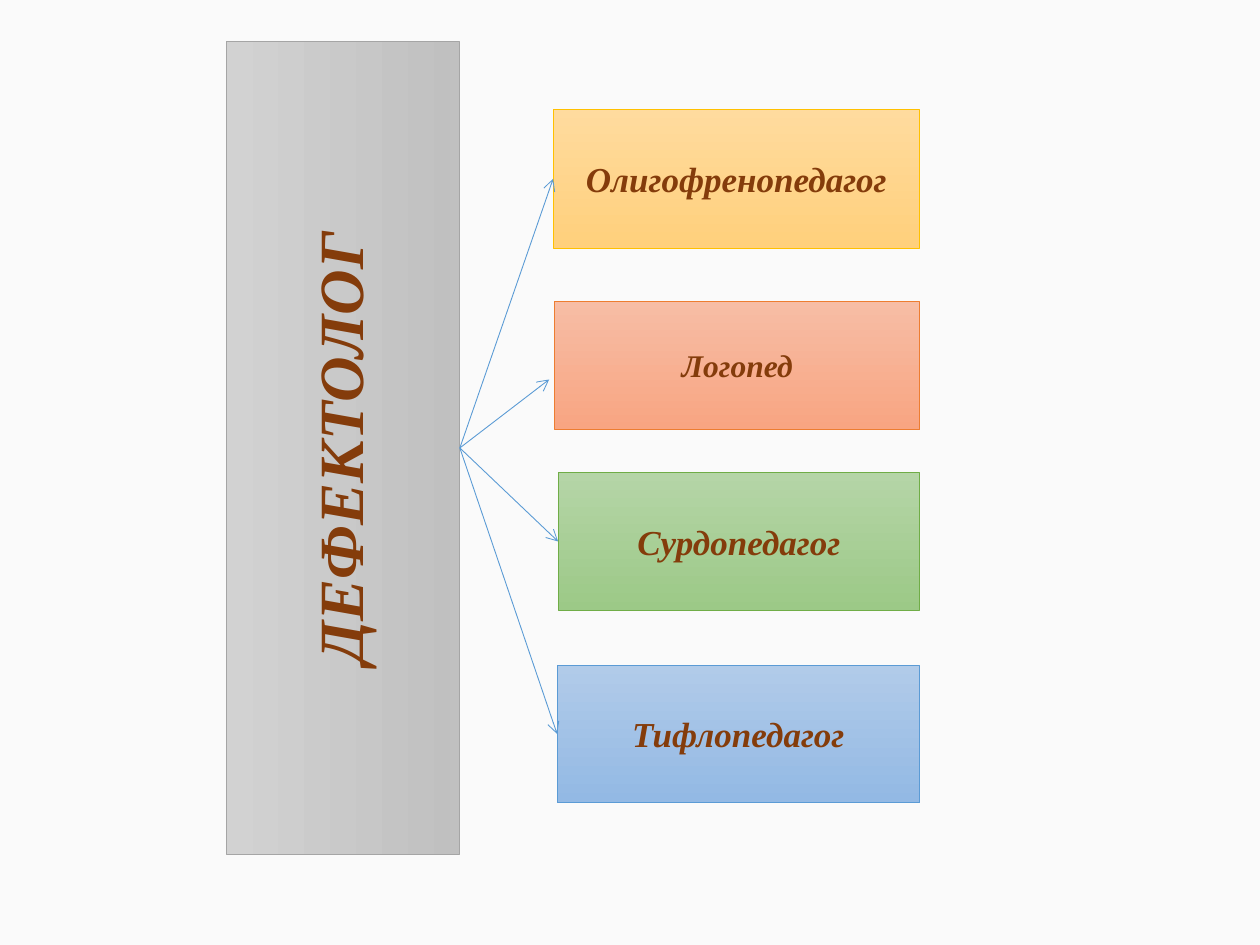
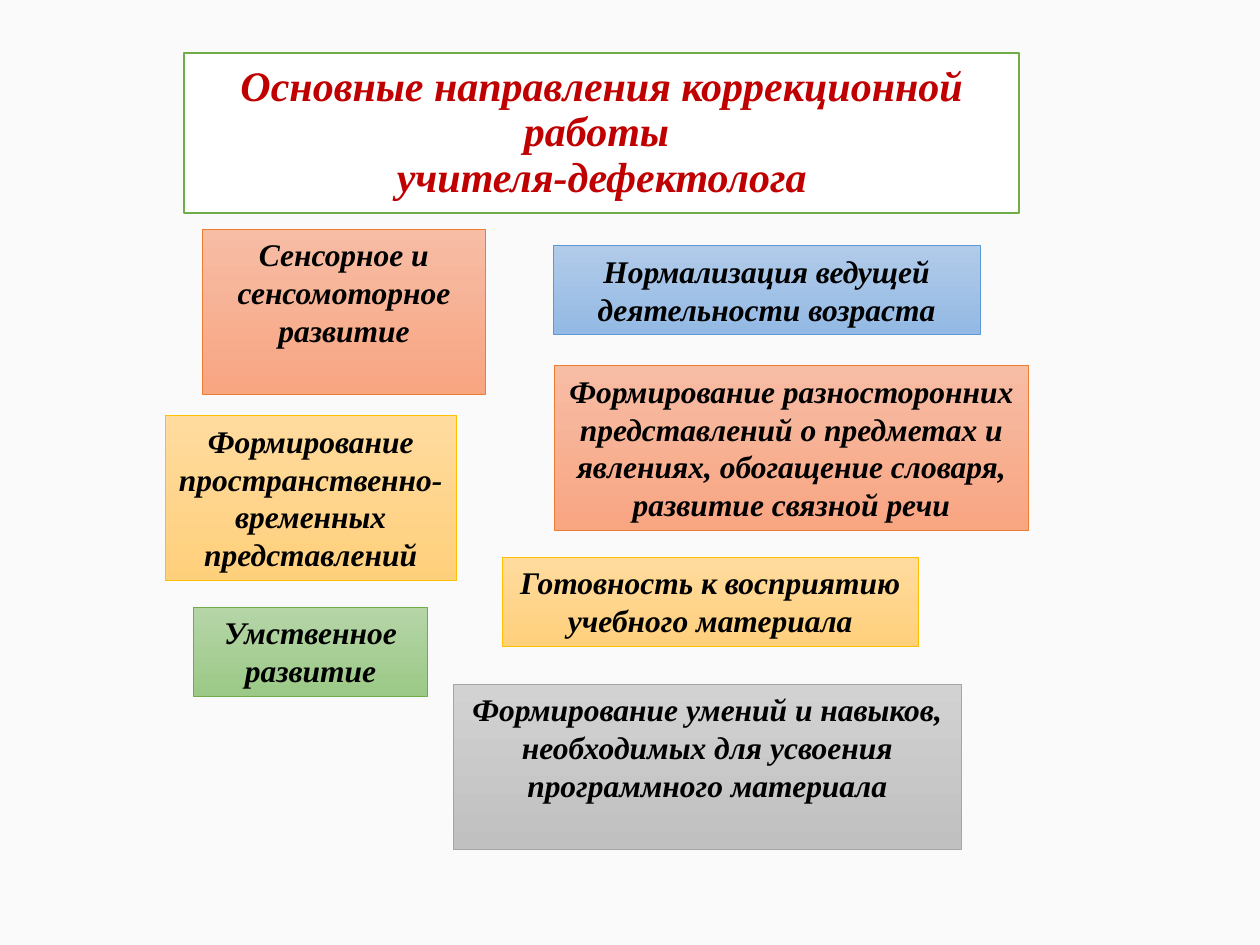
import pptx
import pptx.util
import pptx.dml.color
import pptx.enum.shapes
import pptx.enum.text
import pptx.oxml
import pptx.oxml.ns

Cm = pptx.util.Cm
Pt = pptx.util.Pt
RGBColor = pptx.dml.color.RGBColor
Kind = pptx.enum.shapes.MSO_SHAPE
Anchor = pptx.enum.text.MSO_ANCHOR

FONT = "Times New Roman"
PAPER = RGBColor(0xFA, 0xFA, 0xFA)
WHITE = RGBColor(0xFF, 0xFF, 0xFF)
BLACK = RGBColor(0x00, 0x00, 0x00)
BROWN = RGBColor(0x84, 0x3C, 0x0B)
RED = RGBColor(0xC0, 0x00, 0x00)
LEAF = RGBColor(0x70, 0xAD, 0x47)
SKY = RGBColor(0x5B, 0x9B, 0xD5)

# Each tone: gradient top, gradient bottom, outline
GOLD = (RGBColor(0xFF, 0xDB, 0x9E), RGBColor(0xFF, 0xD0, 0x7C), RGBColor(0xFF, 0xC0, 0x00))
CORAL = (RGBColor(0xF7, 0xBD, 0xA5), RGBColor(0xF8, 0xA5, 0x82), RGBColor(0xED, 0x7D, 0x31))
GREEN = (RGBColor(0xB5, 0xD5, 0xA7), RGBColor(0x9C, 0xC9, 0x87), LEAF)
BLUE = (RGBColor(0xB1, 0xCB, 0xE9), RGBColor(0x93, 0xB9, 0xE4), SKY)
GREY = (RGBColor(0xD2, 0xD2, 0xD2), RGBColor(0xC0, 0xC0, 0xC0), RGBColor(0xA5, 0xA5, 0xA5))

ROLES_RIGHT = 18.54
# Text, tone, left, top, height, size
ROLES = [
    ("Олигофренопедагог", GOLD, 11.15, 2.21, 2.79, 20),
    ("Логопед", CORAL, 11.18, 6.07, 2.59, 18),
    ("Сурдопедагог", GREEN, 11.25, 9.53, 2.77, 20),
    ("Тифлопедагог", BLUE, 11.23, 13.41, 2.77, 20),
]
LOOSE_TIPS = {"Логопед": (11.07, 7.65)}

SHORT, TALL = 1.8, 3.33
# Text, tone, left, top, width, height
TASKS = [
    ("Сенсорное и сенсомоторное развитие", CORAL, 4.09, 4.62, 5.69, TALL),
    ("Формирование пространственно-временных представлений", GOLD, 3.33, 8.38, 5.87, TALL),
    ("Умственное развитие", GREEN, 3.91, 12.24, 4.7, SHORT),
    ("Нормализация ведущей деятельности возраста", BLUE, 11.15, 4.95, 8.61, SHORT),
    ("Формирование разносторонних представлений о предметах и явлениях, "
     "обогащение словаря, развитие связной речи", CORAL, 11.18, 7.37, 9.55, TALL),
    ("Готовность к восприятию учебного материала", GOLD, 10.13, 11.23, 8.38, SHORT),
    ("Формирование умений и навыков, необходимых для усвоения "
     "программного материала", GREY, 9.14, 13.79, 10.24, TALL),
]


def shade(shape, tone):
    top, base, edge = tone
    shape.fill.gradient()
    shape.fill.gradient_angle = 270
    for stop, color in zip(shape.fill.gradient_stops, (top, base)):
        stop.color.rgb = color
    shape.line.color.rgb = edge
    shape.line.width = Pt(0.5)


def write(shape, lines, size, color, anchor=Anchor.MIDDLE):
    """Set centred bold italic text, with a line break between lines."""
    frame = shape.text_frame
    frame.word_wrap = True
    frame.auto_size = pptx.enum.text.MSO_AUTO_SIZE.NONE
    frame.vertical_anchor = anchor
    para = frame.paragraphs[0]
    para.alignment = pptx.enum.text.PP_ALIGN.CENTER
    for num, line in enumerate(lines):
        if num:
            para.add_line_break()
        run = para.add_run()
        run.text = line
        font = run.font
        font.name, font.size = FONT, Pt(size)
        font.bold = font.italic = True
        font.color.rgb = color
    return para


def head(slide, lines, place, size, color):
    """Place and write the title placeholder."""
    title = slide.shapes.title
    title.left, title.top, title.width, title.height = map(Cm, place)
    write(title, lines, size, color).line_spacing = 0.9
    return title


def box(slide, kind, text, tone, place, size, color, anchor=Anchor.MIDDLE):
    shape = slide.shapes.add_shape(kind, *map(Cm, place))
    shape.shadow.inherit = False
    shade(shape, tone)
    write(shape, [text], size, color, anchor)
    return shape


def arrow(slide, bar, card, tip):
    """Link the upright bar to a card, or to a loose tip beside it."""
    x = bar.left + (bar.width + bar.height) // 2
    y = bar.top + bar.height // 2
    end = map(Cm, tip) if tip else (card.left, card.top + card.height // 2)
    link = slide.shapes.add_connector(
        pptx.enum.shapes.MSO_CONNECTOR.STRAIGHT, x, y, *end)
    link.begin_connect(bar, 2)
    # The bar is turned, so its bottom side faces right
    link.begin_x, link.begin_y = x, y
    if not tip:
        link.end_connect(card, 1)
    link.line.color.rgb = SKY
    link.line.width = Pt(0.5)
    tail = pptx.oxml.ns.qn("a:tailEnd")
    link.line._get_or_add_ln().append(
        link._element.makeelement(tail, {"type": "arrow"}))
    props = link._element.spPr
    props.append(props.makeelement(pptx.oxml.ns.qn("a:effectLst"), {}))


def roles(slide):
    bar = head(slide, ["ДЕФЕКТОЛОГ"], (-1.27, 6.68, 16.38, 4.7), 36, BROWN)
    bar.rotation = 270
    shade(bar, GREY)
    cards = [
        box(slide, Kind.FLOWCHART_PROCESS, text, tone,
            (left, top, ROLES_RIGHT - left, high), size, BROWN)
        for text, tone, left, top, high, size in ROLES
    ]
    for card, role in zip(cards, ROLES):
        arrow(slide, bar, card, LOOSE_TIPS.get(role[0]))


def tasks(slide):
    lines = ["Основные направления коррекционной работы ", "учителя-дефектолога"]
    title = head(slide, lines, (3.71, 1.07, 16.84, 3.23), 24, RED)
    title.fill.solid()
    title.fill.fore_color.rgb = WHITE
    title.line.color.rgb = LEAF
    title.line.width = Pt(1)
    for text, tone, *place in TASKS:
        box(slide, Kind.RECTANGLE, text, tone, place, 18, BLACK, Anchor.TOP)


def main():
    deck = pptx.Presentation()
    deck.slide_width, deck.slide_height = Cm(25.4), Cm(19.05)
    back = deck.slide_master.background.fill
    back.solid()
    back.fore_color.rgb = PAPER
    for build in (roles, tasks):
        build(deck.slides.add_slide(deck.slide_layouts.get_by_name("Title Only")))
    deck.save("out.pptx")


if __name__ == "__main__":
    main()
